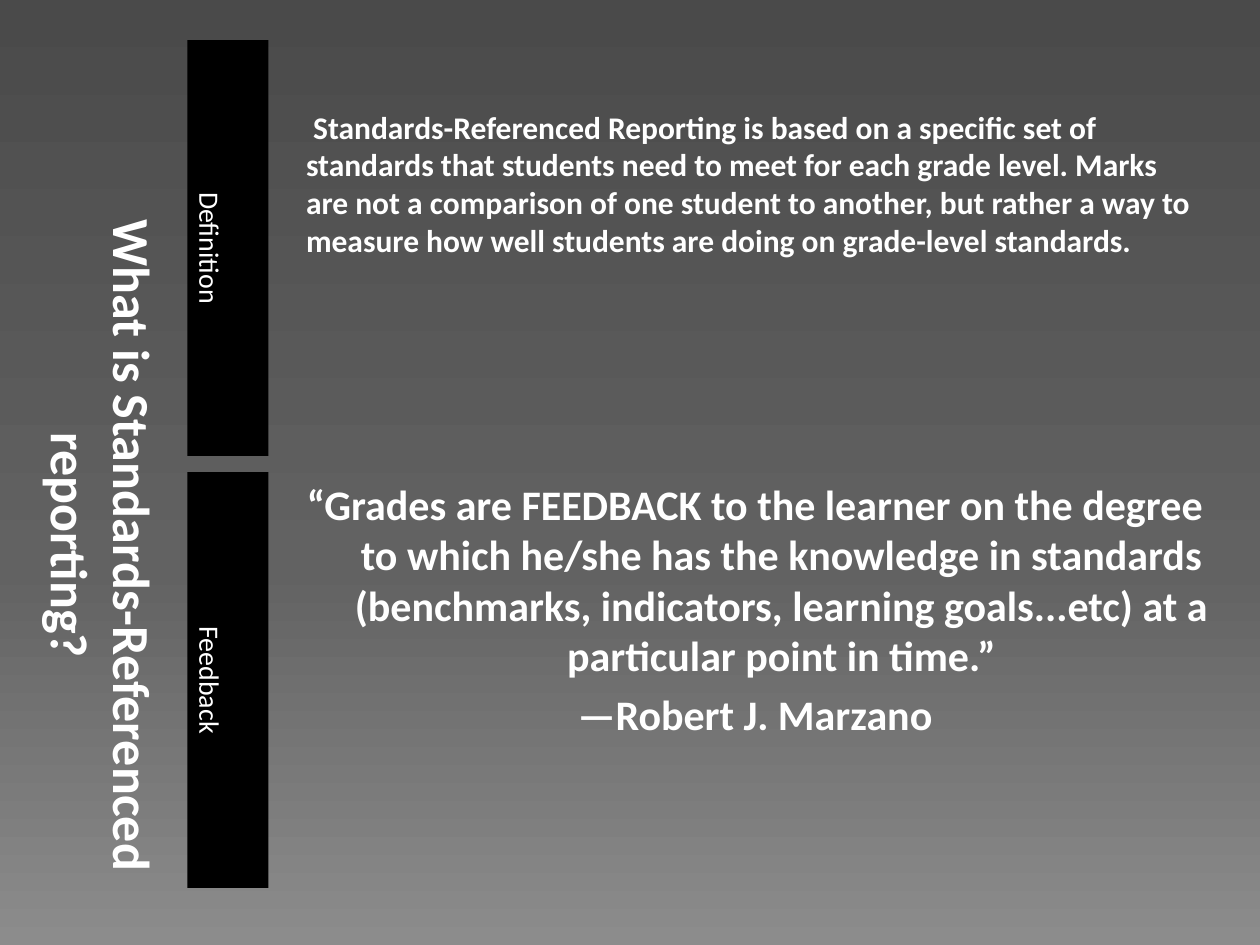
from copy import deepcopy

from pptx import Presentation
from pptx.dml.color import RGBColor
from pptx.enum.shapes import MSO_SHAPE as Shape
from pptx.enum.text import MSO_ANCHOR as Anchor, PP_ALIGN as Align
from pptx.util import Cm, Pt

WHITE = RGBColor(0xFF, 0xFF, 0xFF)
BLACK = RGBColor(0, 0, 0)
BACKDROP = [
    (0, RGBColor(0x4A, 0x4A, 0x4A)),
    (0.6, RGBColor(0x62, 0x62, 0x62)),
    (1, RGBColor(0x8C, 0x8C, 0x8C)),
]
FONT = "Calibri"
TOP, ROW_HEIGHT, ROW_PITCH = 0.81, 8.38, 8.71

TITLE = "What is Standards-Referenced reporting?"
LABELS = ["Definition", "Feedback"]
DEFINITION = (
    "Standards-Referenced Reporting is based on a specific set of standards "
    "that students need to meet for each grade level. Marks are not a "
    "comparison of one student to another, but rather a way to measure how "
    "well students are doing on grade-level standards."
)
QUOTE = [
    "“Grades are FEEDBACK to the learner on the degree to which he/she has "
    "the knowledge in standards (benchmarks, indicators, learning "
    "goals...etc) at a particular point in time.”",
    " —Robert J. Marzano ",
]


def paint_backdrop(slide):
    fill = slide.background.fill
    fill.gradient()
    fill.gradient_angle = 270
    first = fill.gradient_stops[0]._gs
    first.addnext(deepcopy(first))
    for stop, (position, color) in zip(fill.gradient_stops, BACKDROP):
        stop.position = position
        stop.color.rgb = color


def add_run(paragraph, text, size, bold=False):
    run = paragraph.add_run()
    run.text = text
    run.font.name = FONT
    run.font.size = Pt(size)
    run.font.bold = bold
    run.font.color.rgb = WHITE


def add_text_area(slide, left, top, width, height):
    area = slide.shapes.add_textbox(Cm(left), Cm(top), Cm(width), Cm(height))
    area.text_frame.word_wrap = True
    return area.text_frame


def turn_text(frame):
    """Run centred text down the page, settled on the left edge."""
    frame._txBody.bodyPr.set("vert", "vert")
    frame.vertical_anchor = Anchor.BOTTOM
    frame.paragraphs[0].alignment = Align.CENTER


def add_title(slide):
    frame = add_text_area(slide, 0.69, TOP, 2.97, 17.09)
    turn_text(frame)
    frame.margin_top = Cm(3.4)
    frame.margin_bottom = Cm(0.13)
    add_run(frame.paragraphs[0], TITLE, 29.7, bold=True)


def add_label(slide, row, label):
    bar = slide.shapes.add_shape(
        Shape.RECTANGLE, Cm(3.78), Cm(TOP + row * ROW_PITCH), Cm(1.63), Cm(ROW_HEIGHT)
    )
    bar.shadow.inherit = False
    bar.fill.solid()
    bar.fill.fore_color.rgb = BLACK
    bar.line.fill.background()
    turn_text(bar.text_frame)
    add_run(bar.text_frame.paragraphs[0], label, 16)


def add_definition(slide):
    frame = add_text_area(slide, 5.92, 1.27, 18.62, 4.11)
    frame.margin_top = Cm(0.9)
    paragraph = frame.paragraphs[0]
    add_run(paragraph, " ", 18)
    add_run(paragraph, DEFINITION, 18, bold=True)


def add_quote(slide):
    frame = add_text_area(slide, 5.61, TOP + ROW_PITCH, 19.05, ROW_HEIGHT)
    for index, text in enumerate(QUOTE):
        paragraph = frame.add_paragraph() if index else frame.paragraphs[0]
        paragraph.alignment = Align.CENTER
        paragraph.space_before = Pt(4.8)
        properties = paragraph._p.get_or_add_pPr()
        properties.set("marL", str(Cm(1.24)))
        properties.set("indent", str(Cm(-1.07)))
        add_run(paragraph, text, 24, bold=True)


def main():
    deck = Presentation()
    deck.slide_width, deck.slide_height = Cm(25.4), Cm(19.05)
    slide = deck.slides.add_slide(deck.slide_layouts[6])
    paint_backdrop(slide)
    add_title(slide)
    for row, label in enumerate(LABELS):
        add_label(slide, row, label)
    add_quote(slide)
    add_definition(slide)
    deck.save("out.pptx")


if __name__ == "__main__":
    main()
